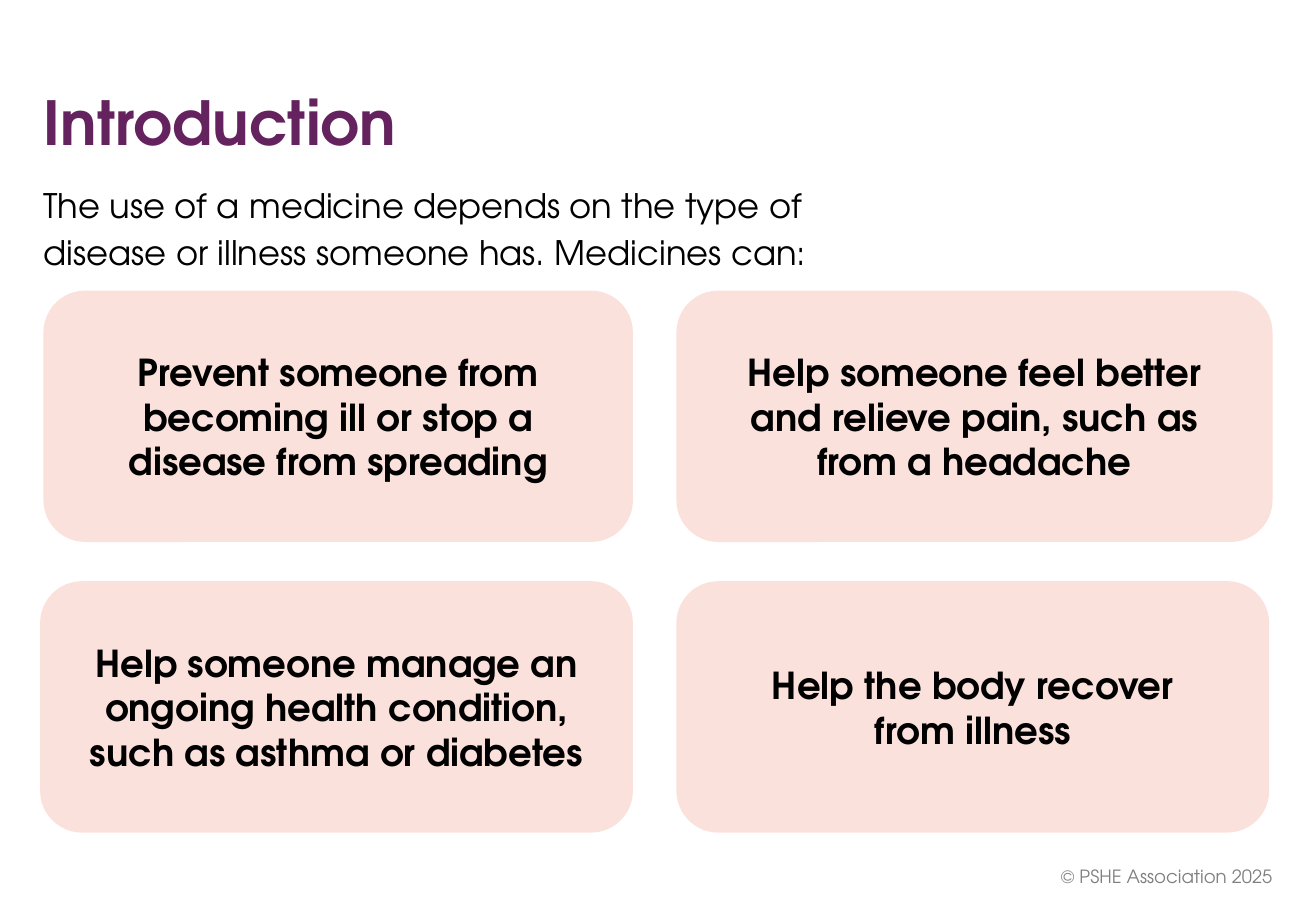
"""Build the Introduction slide on what medicines can do."""
from dataclasses import dataclass

from pptx import Presentation
from pptx import util as u
from pptx.dml import color
from pptx.enum import shapes, text


@dataclass(frozen=True)
class Theme:
    """Colours, font and type sizes of the slide."""
    font: str = "TeX Gyre Adventor"
    heading: str = "64235E"
    body: str = "000000"
    muted: str = "808080"
    card: str = "FBE1DB"
    heading_size: float = 36
    card_size: float = 22
    body_size: float = 20
    footer_size: float = 10.8


@dataclass(frozen=True)
class Box:
    """A rectangle in percent of the slide's width and height."""
    left: float
    top: float
    width: float
    height: float


@dataclass(frozen=True)
class Card:
    """A rounded card in one row of the grid."""
    row: int
    left: float
    width: float
    words: str


THEME = Theme()
WIDTH, HEIGHT = u.Inches(10.83), u.Inches(7.5)
ROW_PITCH, CARD_HEIGHT = 31.9, 27.6
LEFT_EDGE, RIGHT_COLUMN = 2.4, 51.4

CARDS = (
    Card(0, 3.3, 44.8, "Prevent someone from becoming ill or stop a disease from spreading"),
    Card(0, RIGHT_COLUMN, 45.3, "Help someone feel better and relieve pain, such as from a headache"),
    Card(1, 3.05, 45.05, "Help someone manage an ongoing health condition, such as asthma or diabetes"),
    Card(1, RIGHT_COLUMN, 45.05, "Help the body recover\nfrom illness"),
)


def place(box: Box) -> tuple[int, int, int, int]:
    """Turn percentages into slide lengths."""
    return (int(WIDTH * box.left / 100), int(HEIGHT * box.top / 100),
            int(WIDTH * box.width / 100), int(HEIGHT * box.height / 100))


def write(shape, words: str, *, size: float, colour: str = THEME.body, bold: bool = False,
          align=text.PP_ALIGN.LEFT, anchor=text.MSO_ANCHOR.TOP,
          line: float | None = None, margin: float = 0.1) -> None:
    """Fill a shape with one formatted paragraph."""
    frame = shape.text_frame
    frame.word_wrap = True
    frame.auto_size = text.MSO_AUTO_SIZE.NONE
    frame.vertical_anchor = anchor
    frame.margin_left = frame.margin_right = u.Inches(margin)
    frame.margin_top = frame.margin_bottom = u.Inches(0.05)
    paragraph = frame.paragraphs[0]
    paragraph.text = words
    paragraph.alignment = align
    if line:
        paragraph.line_spacing = u.Pt(line)
    for run in paragraph.runs:
        run.font.name = THEME.font
        run.font.size = u.Pt(size)
        run.font.bold = bold
        run.font.color.rgb = color.RGBColor.from_string(colour)


def add_title(slide, words: str) -> None:
    """Move and format the title placeholder."""
    title = slide.shapes.title
    title.left, title.top, title.width, title.height = place(Box(LEFT_EDGE, 7.9, 78.3, 10.1))
    write(title, words, size=THEME.heading_size, colour=THEME.heading, bold=True,
          anchor=text.MSO_ANCHOR.BOTTOM, line=43)


def add_card(slide, card: Card) -> None:
    """Draw one rounded card with centred words."""
    box = Box(card.left, ROW_PITCH * (card.row + 1), card.width, CARD_HEIGHT)
    shape = slide.shapes.add_shape(shapes.MSO_SHAPE.ROUNDED_RECTANGLE, *place(box))
    shape.shadow.inherit = False
    shape.fill.solid()
    shape.fill.fore_color.rgb = color.RGBColor.from_string(THEME.card)
    shape.line.fill.background()
    write(shape, card.words, size=THEME.card_size, bold=True, align=text.PP_ALIGN.CENTER,
          anchor=text.MSO_ANCHOR.MIDDLE, margin=0.16)


def main() -> None:
    """Build and save the presentation."""
    presentation = Presentation()
    presentation.slide_width, presentation.slide_height = WIDTH, HEIGHT
    slide = presentation.slides.add_slide(presentation.slide_layouts[5])
    add_title(slide, "Introduction")
    footer = slide.shapes.add_textbox(*place(Box(75.1, 93.5, 22.5, 5.3)))
    write(footer, "© PSHE Association 2025", size=THEME.footer_size, colour=THEME.muted,
          align=text.PP_ALIGN.RIGHT, anchor=text.MSO_ANCHOR.MIDDLE)
    intro = slide.shapes.add_textbox(*place(Box(LEFT_EDGE, 18.9, 68.1, 11.3)))
    write(intro, "The use of a medicine depends on the type of disease or illness "
          "someone has. Medicines can:", size=THEME.body_size, line=28)
    for card in CARDS:
        add_card(slide, card)
    presentation.save("out.pptx")


if __name__ == "__main__":
    main()
